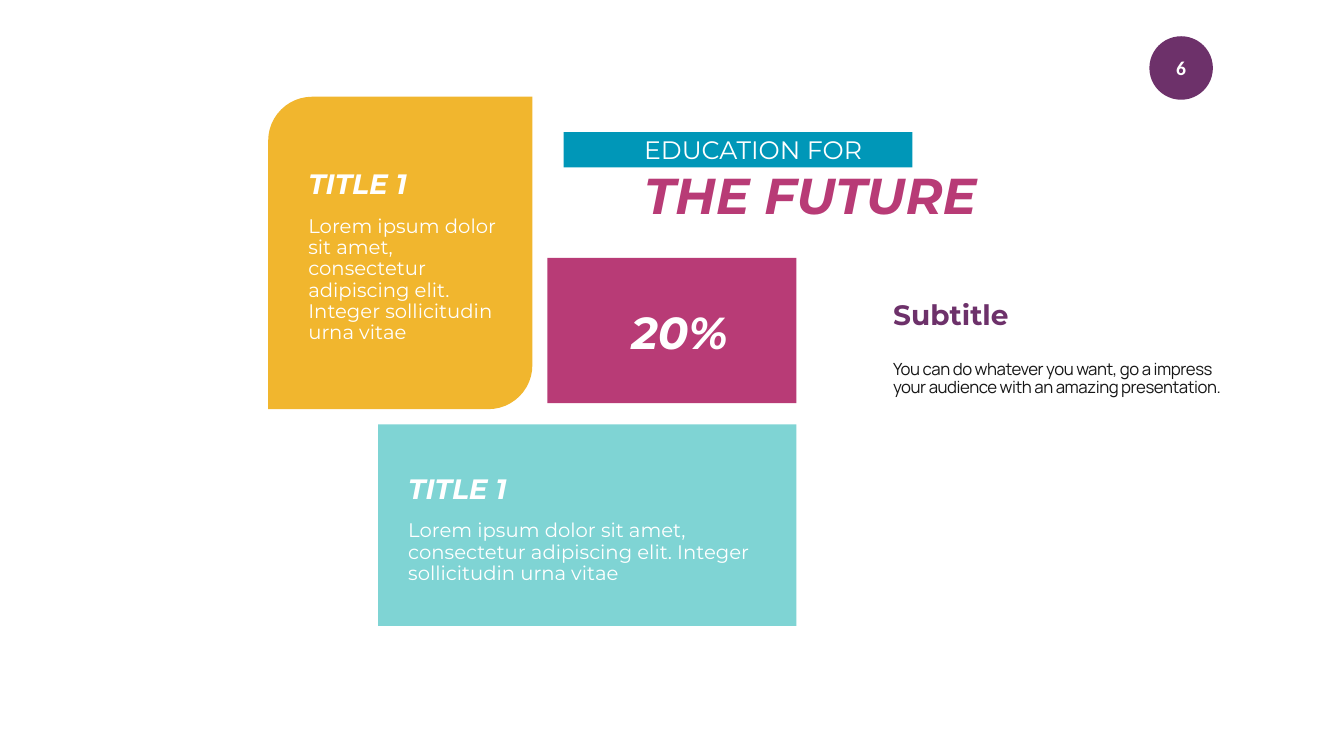
from pptx import Presentation
from pptx.dml.color import RGBColor
from pptx.enum.shapes import MSO_SHAPE
from pptx.enum.text import MSO_ANCHOR, PP_ALIGN
from pptx.util import Emu, Pt

PX = 9144  # 100 px to the inch

RECT = MSO_SHAPE.RECTANGLE
LEAF = MSO_SHAPE.ROUND_2_DIAG_RECTANGLE
OVAL = MSO_SHAPE.OVAL
LEFT, CENTER = PP_ALIGN.LEFT, PP_ALIGN.CENTER
TOP, MIDDLE = MSO_ANCHOR.TOP, MSO_ANCHOR.MIDDLE

WHITE = RGBColor(0xFF, 0xFF, 0xFF)
INK = RGBColor(0x17, 0x17, 0x17)
PURPLE = RGBColor(0x6D, 0x31, 0x6A)
YELLOW = RGBColor(0xF1, 0xB6, 0x2E)
AQUA = RGBColor(0x7F, 0xD4, 0xD4)
PINK = RGBColor(0xB8, 0x3B, 0x76)
BLUE = RGBColor(0x00, 0x97, 0xB8)

LOREM = ("Lorem ipsum dolor sit amet, consectetur adipiscing elit. "
         "Integer sollicitudin urna vitae")


def scale(box):
    return [Emu(n * PX) for n in box]


def add_block(slide, kind, box, color):
    block = slide.shapes.add_shape(kind, *scale(box))
    block.shadow.inherit = False
    block.fill.solid()
    block.fill.fore_color.rgb = color
    block.line.fill.background()


def write(para, text, size=14, color=WHITE, face="Montserrat", bold=False,
          italic=False, align=LEFT, lead=0.9, track=0):
    para.alignment = align
    para.line_spacing = lead
    run = para.add_run()
    run.text = text
    font = run.font
    font.name, font.size = face, Pt(size)
    font.bold, font.italic = bold, italic
    font.color.rgb = color
    if track:
        run._r.get_or_add_rPr().set("spc", str(track))


def add_frame(slide, box, anchor=TOP):
    frame = slide.shapes.add_textbox(*scale(box)).text_frame
    frame.word_wrap = True
    frame.vertical_anchor = anchor
    return frame


def add_label(slide, box, text, anchor=TOP, **style):
    write(add_frame(slide, box, anchor).paragraphs[0], text, **style)


def add_card(slide, kind, box, color, title, body):
    add_block(slide, kind, box, color)
    add_label(slide, title, "TITLE 1", size=20, bold=True, italic=True)
    add_label(slide, body, LOREM)


def main():
    prs = Presentation()
    prs.slide_width, prs.slide_height = scale((1333, 750))
    slide = prs.slides.add_slide(prs.slide_layouts[6])

    # Page number
    add_block(slide, OVAL, (1140, 36, 63, 63), PURPLE)
    add_label(slide, (1136, 51, 71, 32), "6", anchor=MIDDLE, face="Calibri",
              bold=True, align=CENTER, lead=1.0)

    # Cards
    add_card(slide, LEAF, (266, 96, 262, 310), YELLOW,
             title=(296, 164, 208, 38), body=(296, 210, 220, 132))
    add_card(slide, RECT, (375, 421, 415, 200), AQUA,
             title=(395, 467, 355, 38), body=(395, 512, 375, 83))

    # Figure
    add_block(slide, RECT, (543, 256, 247, 144), PINK)
    add_label(slide, (570, 303, 208, 38), "20%", size=32, bold=True,
              italic=True, align=CENTER)

    # Heading
    add_block(slide, RECT, (559, 131, 346, 35), BLUE)
    head = add_frame(slide, (629, 128, 386, 101))
    write(head.paragraphs[0], "EDUCATION FOR", size=18, lead=1.0)
    write(head.add_paragraph(), "THE FUTURE", size=36, color=PINK,
          bold=True, italic=True, lead=1.0)

    # Side note
    add_label(slide, (876, 294, 368, 32), "Subtitle", size=20, color=PURPLE,
              bold=True)
    add_label(slide, (876, 353, 368, 100),
              "You can do whatever you want, go a impress your audience "
              "with an amazing presentation.",
              size=12, color=INK, face="Manrope", track=-30)

    prs.save("out.pptx")


if __name__ == "__main__":
    main()
